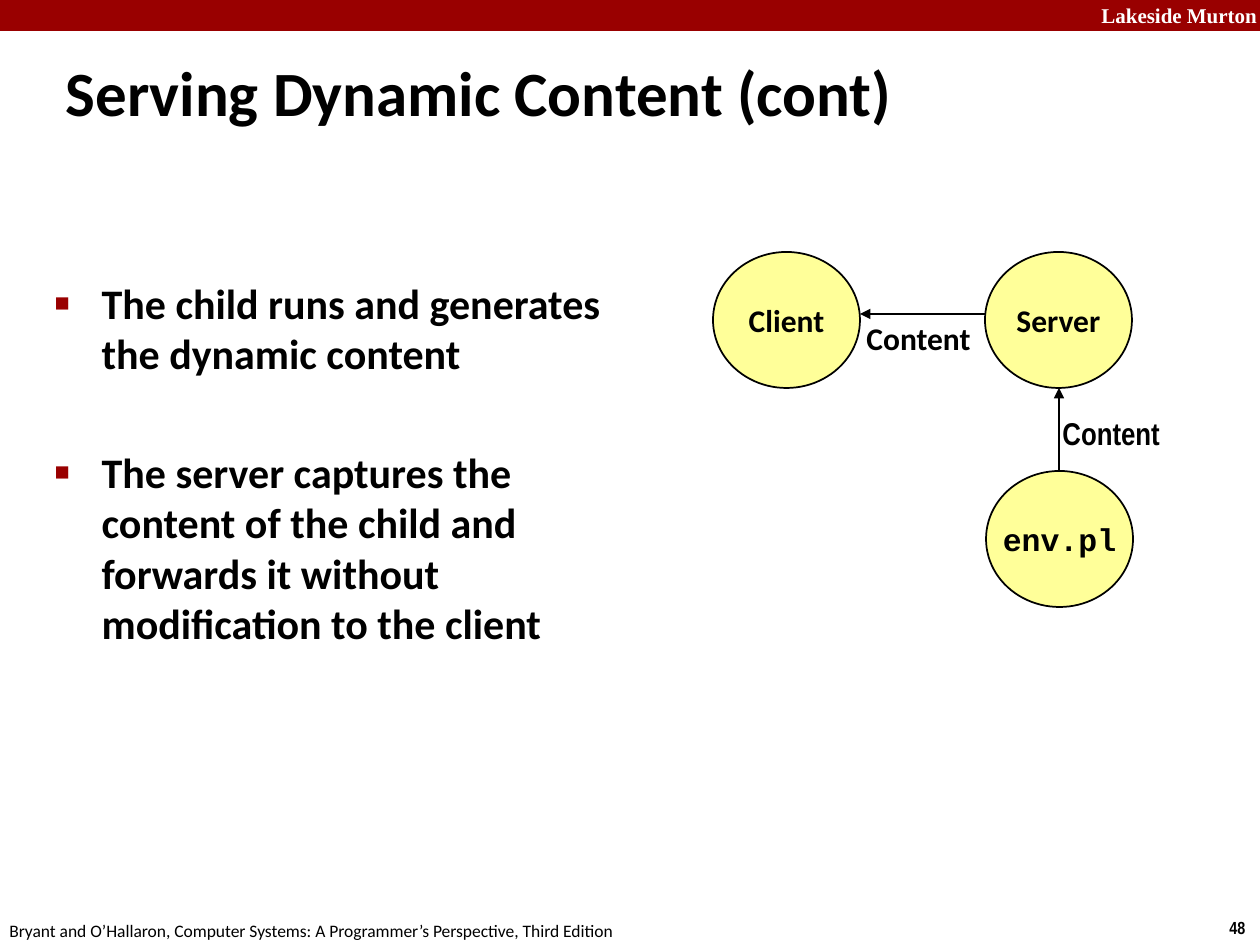
from dataclasses import dataclass

from lxml.etree import SubElement
from pptx import Presentation
from pptx.dml.color import RGBColor
from pptx.enum.shapes import MSO_CONNECTOR, MSO_SHAPE
from pptx.enum.text import MSO_ANCHOR, MSO_AUTO_SIZE, PP_ALIGN
from pptx.oxml.ns import qn
from pptx.util import Emu, Pt

BLACK = RGBColor(0x00, 0x00, 0x00)
WHITE = RGBColor(0xFF, 0xFF, 0xFF)
RED = RGBColor(0x99, 0x00, 0x00)
YELLOW = RGBColor(0xFF, 0xFF, 0x99)

PX_PER_INCH = 126
BULLET_INDENT = 47
NODE_SIZE = (147, 136)


@dataclass
class Label:
    text: str
    place: tuple[int, int, int, int]
    size: int
    font: str = "Calibri"
    color: RGBColor = BLACK
    bold: bool = True
    anchor: MSO_ANCHOR = MSO_ANCHOR.TOP


@dataclass
class Node:
    text: str
    left: int
    top: int
    font: str = "Calibri"


@dataclass
class Arrow:
    start: tuple[int, int]
    end: tuple[int, int]


LABELS = [
    Label("Lakeside Murton", (1089, -4, 180, 38), 12, "Times New Roman", WHITE),
    Label("48", (1217, 911, 43, 34), 10, "Arial Narrow"),
    Label("Bryant and O’Hallaron, Computer Systems: A Programmer’s Perspective, "
          "Third Edition", (-3, 914, 640, 34), 10, bold=False),
    Label("Content", (1050, 408, 145, 50), 18, "Arial Narrow", anchor=MSO_ANCHOR.MIDDLE),
    Label("Content", (854, 313, 131, 50), 18, anchor=MSO_ANCHOR.MIDDLE),
]
NODES = [
    Node("Client", 713, 252),
    Node("Server", 985, 252),
    Node("env.pl", 986, 471, "Courier New"),
]
ARROWS = [
    Arrow((1059, 471), (1059, 388)),
    Arrow((985, 314), (860, 314)),
]
BULLETS = [
    "The child runs and generates the dynamic content",
    "The server captures the content of the child and forwards it without "
    "modification to the client",
]


def px(length: int) -> Emu:
    return Emu(round(length * 914400 / PX_PER_INCH))


def set_all(target, values: dict) -> None:
    for name, value in values.items():
        setattr(target, name, value)


def place(shape, left: int, top: int, width: int, height: int) -> None:
    set_all(shape, {"left": px(left), "top": px(top),
                    "width": px(width), "height": px(height)})


def write(para, text: str, size: int, font: str = "Calibri",
          color: RGBColor = BLACK, bold: bool = True) -> None:
    span = para.add_run()
    span.text = text
    set_all(span.font, {"name": font, "size": Pt(size), "bold": bold})
    span.font.color.rgb = color


def set_frame(frame, anchor: MSO_ANCHOR, wrap: bool) -> None:
    set_all(frame, {"auto_size": MSO_AUTO_SIZE.NONE, "word_wrap": wrap,
                    "vertical_anchor": anchor})


def add_label(page, label: Label) -> None:
    box = page.shapes.add_textbox(*map(px, label.place))
    set_frame(box.text_frame, label.anchor, False)
    para = box.text_frame.paragraphs[0]
    para.alignment = PP_ALIGN.LEFT
    write(para, label.text, label.size, label.font, label.color, label.bold)


def add_node(page, node: Node) -> None:
    oval = page.shapes.add_shape(
        MSO_SHAPE.OVAL, *map(px, (node.left, node.top, *NODE_SIZE)))
    oval.shadow.inherit = False
    oval.fill.solid()
    oval.fill.fore_color.rgb = YELLOW
    oval.line.color.rgb = BLACK
    oval.line.width = Pt(1)
    set_frame(oval.text_frame, MSO_ANCHOR.MIDDLE, False)
    para = oval.text_frame.paragraphs[0]
    para.alignment = PP_ALIGN.CENTER
    write(para, node.text, 18, node.font)


def add_arrow(page, arrow: Arrow) -> None:
    line = page.shapes.add_connector(
        MSO_CONNECTOR.STRAIGHT, *map(px, (*arrow.start, *arrow.end)))
    line.line.color.rgb = BLACK
    line.line.width = Pt(1)
    SubElement(line.line._get_or_add_ln(), qn("a:tailEnd"), type="triangle")
    SubElement(line._element.spPr, qn("a:effectLst"))


def add_bullet(para, text: str) -> None:
    write(para, text, 24)
    properties = para._p.get_or_add_pPr()
    properties.set("marL", str(px(BULLET_INDENT)))
    properties.set("indent", str(-px(BULLET_INDENT)))
    color = SubElement(properties, qn("a:buClr"))
    SubElement(color, qn("a:srgbClr"), val=str(RED))
    SubElement(properties, qn("a:buSzPct"), val="60000")
    SubElement(properties, qn("a:buChar"), char="■")


def main() -> None:
    deck = Presentation()
    set_all(deck, {"slide_width": px(1260), "slide_height": px(945)})
    page = deck.slides.add_slide(deck.slide_layouts[1])

    # Top band
    band = page.shapes.add_shape(MSO_SHAPE.RECTANGLE, *map(px, (0, 0, 1260, 31)))
    band.shadow.inherit = False
    band.fill.solid()
    band.fill.fore_color.rgb = RED
    band.line.fill.background()

    # Title
    title = page.shapes.title
    place(title, 53, 47, 1134, 79)
    set_frame(title.text_frame, MSO_ANCHOR.TOP, True)
    heading = title.text_frame.paragraphs[0]
    heading.alignment = PP_ALIGN.LEFT
    write(heading, "Serving Dynamic Content (cont)", 36)

    # Bullet list
    body = page.placeholders[1]
    place(body, 42, 271, 591, 614)
    frame = body.text_frame
    set_frame(frame, MSO_ANCHOR.TOP, True)
    for index, text in enumerate(BULLETS):
        para = frame.add_paragraph() if index else frame.paragraphs[0]
        para.space_before = Pt(39 if index else 0)
        add_bullet(para, text)

    # Process diagram, band text and footer
    for node in NODES:
        add_node(page, node)
    for arrow in ARROWS:
        add_arrow(page, arrow)
    for label in LABELS:
        add_label(page, label)

    deck.save("out.pptx")


if __name__ == "__main__":
    main()
